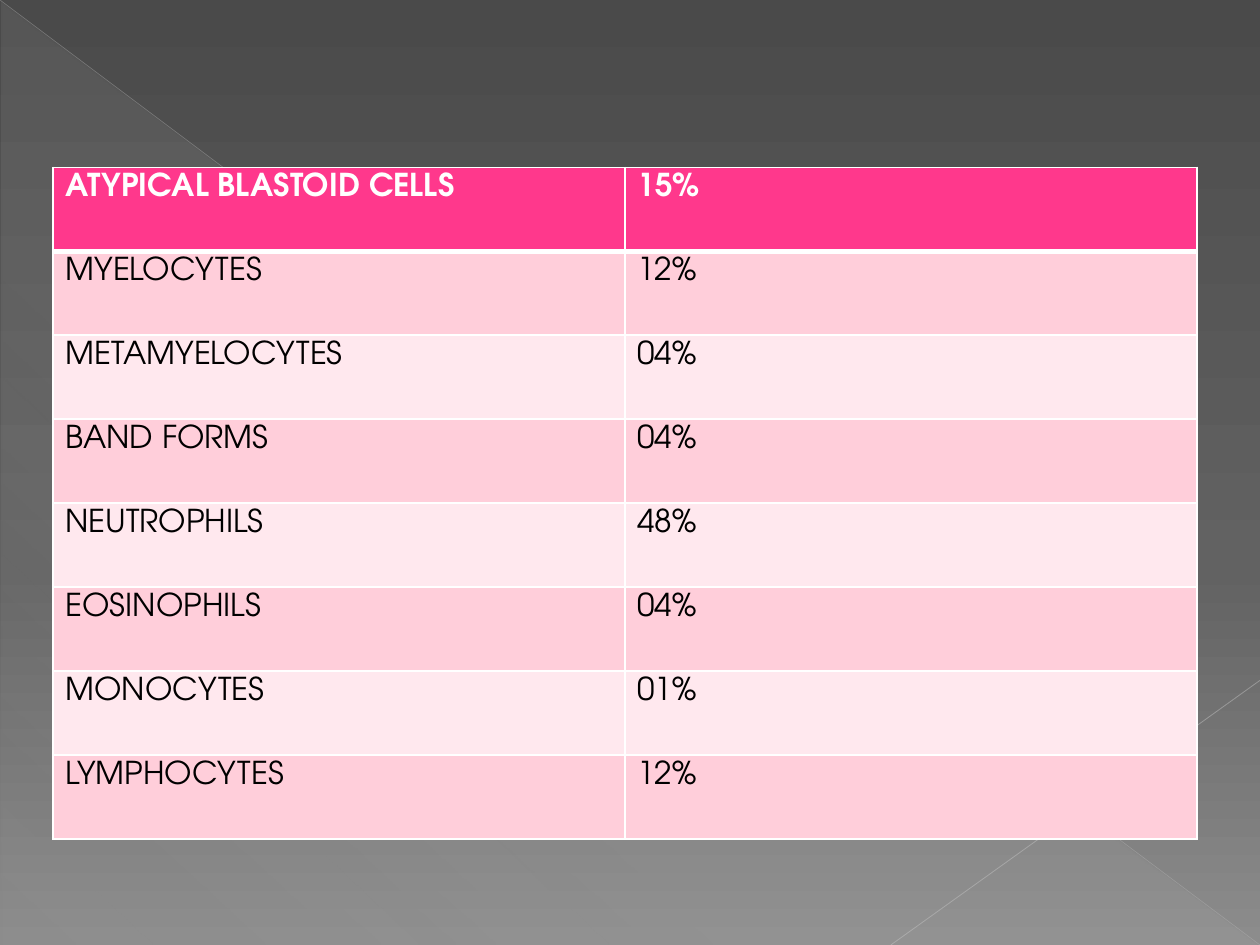
from typing import NamedTuple

from lxml import etree
from pptx import Presentation
from pptx import util as u
from pptx.dml.color import RGBColor
from pptx.enum import shapes
from pptx.oxml.ns import qn

WIDE, HIGH = 10, 7.5
FONT = "TeX Gyre Adventor"
WHITE, BLACK, PINK = "FFFFFF", "000000", "FF388C"
BANDS = "FFCEDA", "FFE8EE"


class Count(NamedTuple):
    cell: str
    share: str


class Stop(NamedTuple):
    at: int
    tint: str
    alpha: int = 100


class Ray(NamedTuple):
    start: tuple[float, float]
    end: tuple[float, float]
    tint: str
    width: float
    alpha: int


COUNTS = [
    Count("ATYPICAL BLASTOID CELLS", "15%"),
    Count("MYELOCYTES", "12%"),
    Count("METAMYELOCYTES", "04%"),
    Count("BAND FORMS", "04%"),
    Count("NEUTROPHILS", "48%"),
    Count("EOSINOPHILS", "04%"),
    Count("MONOCYTES", "01%"),
    Count("LYMPHOCYTES", "12%"),
]
SKY = [Stop(0, "4A4A4A"), Stop(60, "626262"), Stop(100, "8C8C8C")]
SHEEN = [Stop(0, "D2D2D2", 10), Stop(70, "D2D2D2", 8), Stop(100, "D2D2D2", 1)]
RAYS = [
    Ray((0, 0), (1, 1), "BFBFBF", 0.39, 35),
    Ray((1, 0.72), (0.707, 1), "C6C6C6", 0.47, 45),
]


def color(tint: str) -> RGBColor:
    return RGBColor.from_string(tint)


def across(share: float) -> int:
    return u.Inches(WIDE * share)


def down(share: float) -> int:
    return u.Inches(HIGH * share)


def add(node, tag: str, **attrs):
    return etree.SubElement(node, qn(tag), {k: str(v) for k, v in attrs.items()})


def blend(node, stops: list[Stop], angle: int) -> None:
    solid = node.find(qn("a:solidFill"))
    grad = etree.Element(qn("a:gradFill"), rotWithShape="1")
    chain = add(grad, "a:gsLst")
    for stop in stops:
        point = add(chain, "a:gs", pos=stop.at * 1000)
        shade = add(point, "a:srgbClr", val=stop.tint)
        add(shade, "a:alpha", val=stop.alpha * 1000)
    add(grad, "a:lin", ang=angle * 60000, scaled=0)
    node.replace(solid, grad)


def draw_ray(slide, ray: Ray) -> None:
    line = slide.shapes.add_connector(
        shapes.MSO_CONNECTOR.STRAIGHT,
        across(ray.start[0]), down(ray.start[1]),
        across(ray.end[0]), down(ray.end[1]),
    )
    line.line.color.rgb = color(ray.tint)
    line.line.width = u.Pt(ray.width)
    props = line.element.spPr
    shade = props.find(".//" + qn("a:srgbClr"))
    add(shade, "a:alpha", val=ray.alpha * 1000)
    add(props, "a:effectLst")


def write(frame, words: str, *, size: float = 18, tint: str = BLACK, bold: bool = False) -> None:
    run = frame.paragraphs[0].add_run()
    run.text = words
    run.font.name = FONT
    run.font.size = u.Pt(size)
    run.font.bold = bold
    run.font.color.rgb = color(tint)


def edge(cell, top: int, base: int) -> None:
    props = cell._tc.get_or_add_tcPr()
    sides = {"a:lnL": 1, "a:lnR": 1, "a:lnT": top, "a:lnB": base}
    for spot, (tag, width) in enumerate(sides.items()):
        line = etree.Element(qn(tag), w=str(u.Pt(width)))
        add(add(line, "a:solidFill"), "a:srgbClr", val=WHITE)
        props.insert(spot, line)


def draw_table(slide, counts: list[Count]) -> None:
    table = slide.shapes.add_table(
        len(counts), 2, across(0.042), down(0.177), across(0.908), down(0.711)
    ).table
    for row, count in enumerate(counts):
        head = row == 0
        for col, words in enumerate(count):
            cell = table.cell(row, col)
            cell.fill.solid()
            cell.fill.fore_color.rgb = color(PINK if head else BANDS[(row - 1) % 2])
            edge(cell, top=3 if row == 1 else 1, base=3 if head else 1)
            write(cell.text_frame, words, tint=WHITE if head else BLACK, bold=head)


def draw_back(slide) -> None:
    slide.background.fill.solid()
    blend(slide.element.find(".//" + qn("p:bgPr")), SKY, 90)
    wedge = slide.shapes.add_shape(
        shapes.MSO_SHAPE.RIGHT_TRIANGLE,
        across(0.001), down(0.002), across(0.998), down(0.998),
    )
    wedge.shadow.inherit = False
    wedge.line.fill.background()
    wedge.fill.solid()
    blend(wedge.element.spPr, SHEEN, 133)
    for ray in RAYS:
        draw_ray(slide, ray)


def main() -> None:
    deck = Presentation()
    deck.slide_width, deck.slide_height = across(1), down(1)
    slide = deck.slides.add_slide(deck.slide_layouts[6])
    draw_back(slide)
    draw_table(slide, COUNTS)
    deck.save("out.pptx")


if __name__ == "__main__":
    main()
